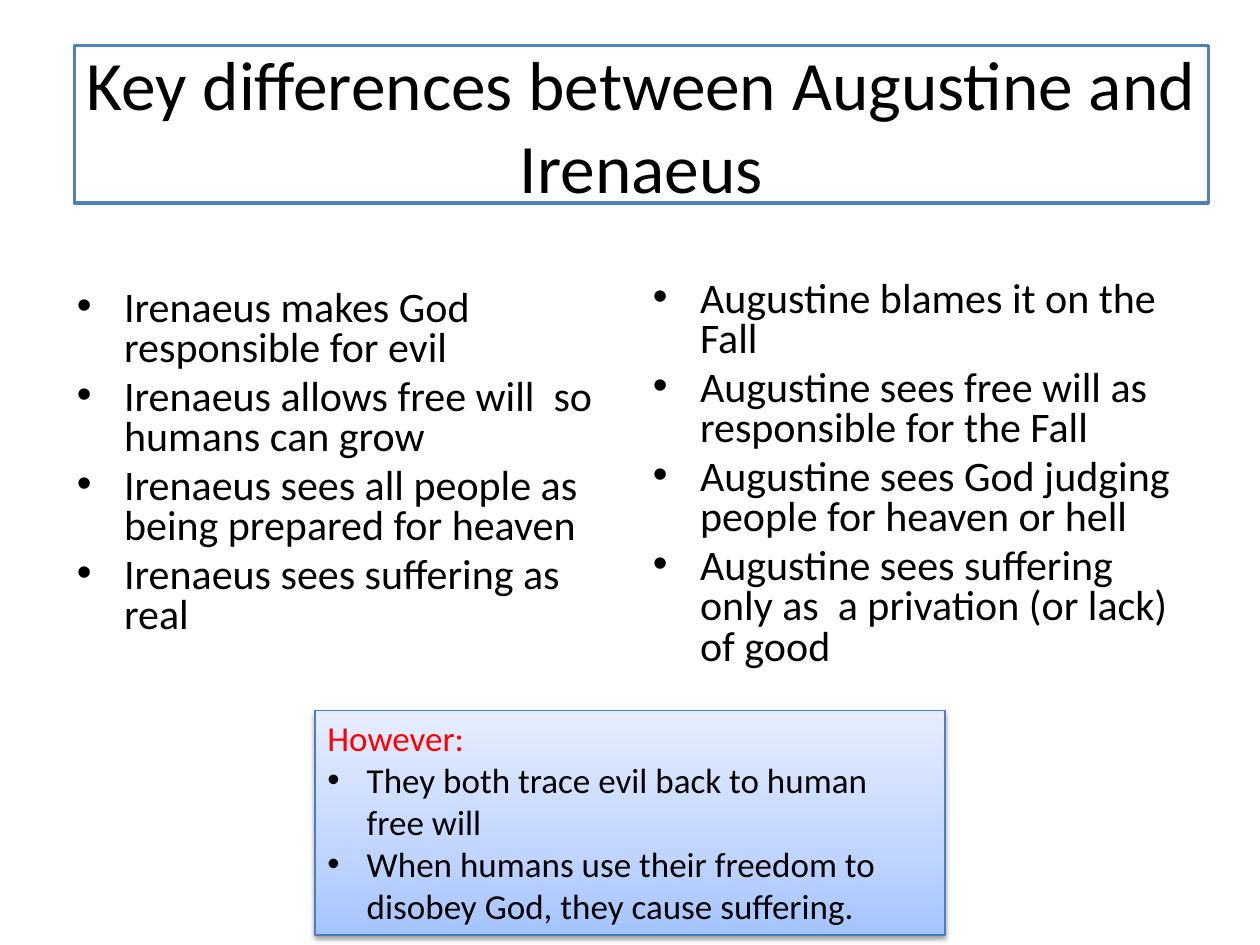
"""Build a slide comparing the theodicies of Augustine and Irenaeus."""
from dataclasses import dataclass

from lxml import etree
from pptx import Presentation
from pptx.dml.color import RGBColor
from pptx.enum import shapes, text
from pptx.oxml.ns import qn
from pptx.util import Pt


@dataclass(frozen=True)
class Theme:
    font: str = "Calibri"
    ink: str = "000000"
    alert: str = "FF0000"
    paper: str = "FFFFFF"
    title_line: str = "4F81BD"
    box_line: str = "4B7EBC"
    box_stops: tuple = ((0, "A4C4FF"), (35, "BFD4FF"), (100, "E6EEFF"))
    title_size: float = 39.6
    list_size: float = 24
    box_size: float = 20


THEME = Theme()

IRENAEUS = (
    "Irenaeus makes God responsible for evil",
    "Irenaeus allows free will  so humans can grow",
    "Irenaeus sees all people as being prepared for heaven",
    "Irenaeus sees suffering as real",
)
AUGUSTINE = (
    "Augustine blames it on the Fall",
    "Augustine sees free will as responsible for the Fall",
    "Augustine sees God judging people for heaven or hell",
    "Augustine sees suffering only as  a privation (or lack) of good",
)
SHARED = (
    "They both trace evil back to human free will",
    "When humans use their freedom to disobey God, they cause suffering.",
)


def place(s, left, top, width, height):
    s.left, s.top, s.width, s.height = map(Pt, (left, top, width, height))


def add_text(tf, content, *, size, color=THEME.ink, align=text.PP_ALIGN.LEFT,
             spacing=None, before=None, indent=None):
    p = tf.add_paragraph() if tf.text else tf.paragraphs[0]
    p.alignment = align
    if spacing is not None:
        p.line_spacing = spacing
    if before is not None:
        p.space_before = Pt(before)
    if indent is not None:
        add_bullet(p, indent)
    r = p.add_run()
    r.text = content
    r.font.name, r.font.size = THEME.font, Pt(size)
    r.font.color.rgb = RGBColor.from_string(color)


def add_bullet(p, indent):
    pPr = p._p.get_or_add_pPr()
    pPr.set("marL", str(Pt(indent)))
    pPr.set("indent", str(-Pt(indent)))
    etree.SubElement(pPr, qn("a:buFont"), typeface="Arial")
    etree.SubElement(pPr, qn("a:buChar"), char="•")


def set_line(s, color, width):
    s.line.color.rgb = RGBColor.from_string(color)
    s.line.width = Pt(width)


def add_color(parent, color):
    return etree.SubElement(parent, qn("a:srgbClr"), val=color)


def set_gradient(s, stops):
    s.fill.gradient()
    s.fill.gradient_angle = 90
    gs_list = s._element.spPr.find(".//" + qn("a:gsLst"))
    for gs in list(gs_list):
        gs_list.remove(gs)
    for pos, color in stops:
        add_color(etree.SubElement(gs_list, qn("a:gs"), pos=str(pos * 1000)), color)


def set_shadow(s, color, alpha, blur, dist):
    s.shadow.inherit = False
    effects = s._element.spPr.find(qn("a:effectLst"))
    shadow = etree.SubElement(effects, qn("a:outerShdw"), blurRad=str(Pt(blur)),
                              dist=str(Pt(dist)), dir="5400000", rotWithShape="0")
    etree.SubElement(add_color(shadow, color), qn("a:alpha"), val=str(alpha * 1000))


def fill_title(s, content):
    place(s, 42.5, 25.9, 648, 90)
    s.fill.solid()
    s.fill.fore_color.rgb = RGBColor.from_string(THEME.paper)
    set_line(s, THEME.title_line, 2)
    tf = s.text_frame
    tf.auto_size = text.MSO_AUTO_SIZE.NONE
    tf.vertical_anchor = text.MSO_ANCHOR.MIDDLE
    tf.margin_left = tf.margin_right = Pt(6)
    add_text(tf, content, size=THEME.title_size, align=text.PP_ALIGN.CENTER)


def fill_list(s, items, left, top):
    place(s, left, top, 318.2, 356.4)
    s.text_frame.auto_size = text.MSO_AUTO_SIZE.NONE
    for item in items:
        add_text(s.text_frame, item, size=THEME.list_size, spacing=0.8,
                 before=THEME.list_size * 0.2, indent=27)


def add_summary(slide, heading, items):
    s = slide.shapes.add_shape(shapes.MSO_SHAPE.RECTANGLE,
                               Pt(180), Pt(406.1), Pt(360), Pt(128.2))
    set_gradient(s, THEME.box_stops)
    set_line(s, THEME.box_line, 0.75)
    set_shadow(s, THEME.ink, 38, 3.1, 1.6)
    tf = s.text_frame
    tf.word_wrap = True
    tf.auto_size = text.MSO_AUTO_SIZE.SHAPE_TO_FIT_TEXT
    tf.vertical_anchor = text.MSO_ANCHOR.TOP
    add_text(tf, heading, size=THEME.box_size, color=THEME.alert)
    for item in items:
        add_text(tf, item, size=THEME.box_size, indent=22.5)


def main():
    prs = Presentation()
    prs.slide_width, prs.slide_height = Pt(720), Pt(540)
    slide = prs.slides.add_slide(prs.slide_layouts.get_by_name("Two Content"))
    title, left, right = slide.placeholders
    fill_title(title, "Key differences between Augustine and Irenaeus")
    fill_list(left, IRENAEUS, 36.7, 162)
    fill_list(right, AUGUSTINE, 365.8, 157)
    add_summary(slide, "However:", SHARED)
    prs.save("out.pptx")


if __name__ == "__main__":
    main()
